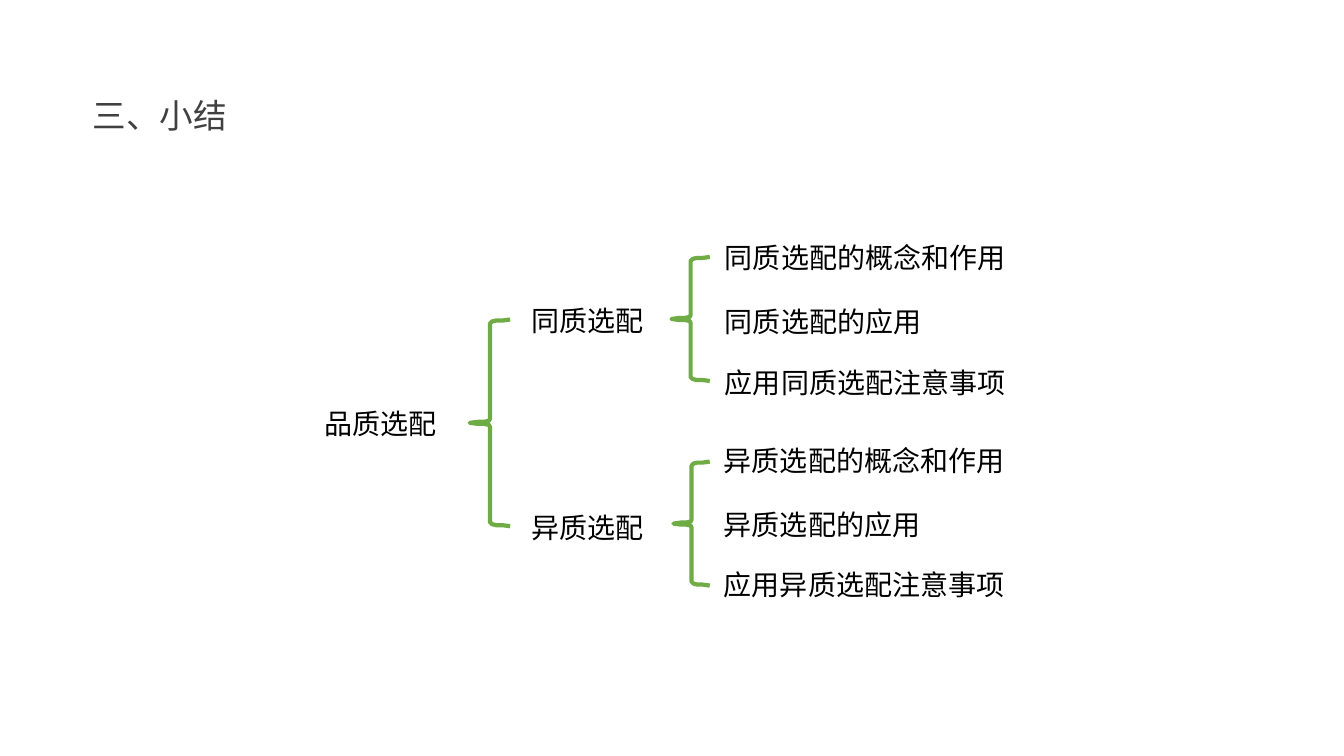
from pptx import Presentation
from pptx.dml.color import RGBColor
from pptx.enum.text import MSO_ANCHOR, MSO_AUTO_SIZE
from pptx.oxml.ns import qn
from pptx.util import Inches, Pt
from lxml.etree import SubElement

FONT = "Noto Sans CJK SC"
GREEN = "6FAC46"
TITLE = "三、小结"
TERMS = [
    ("品质选配", 3.22, 4),
    ("同质选配", 5.27, 2.98),
    ("异质选配", 5.27, 5.03),
]
LISTS = [
    (["同质选配的概念和作用", "同质选配的应用", "应用同质选配注意事项"], 7.19, 2.36),
    (["异质选配的概念和作用", "异质选配的应用", "应用异质选配注意事项"], 7.18, 4.37),
]
BRACES = [
    (4.66, 3.17, 0.4, 2.05),
    (6.66, 2.55, 0.38, 1.23),
    (6.68, 4.58, 0.36, 1.23),
]
GAPS = [0, 21.4, 19.3]
ARM = [(1, 0), (0.6, 0.01), (0.3, 0.01), (0.1, 0.02), (0, 0.04)]
TIP = [(0, 0.04), (-0.05, 0.02), (-0.3, 0.01), (-0.6, 0.01), (-1, 0)]


def color(code):
    return RGBColor.from_string(code)


def write(slide, lines, left, top, width, height, size=20, ink="000000",
          anchor=MSO_ANCHOR.TOP, inset=0.03):
    box = slide.shapes.add_textbox(*map(Inches, (left, top, width, height)))
    frame = box.text_frame
    frame.word_wrap = True
    frame.auto_size = MSO_AUTO_SIZE.NONE
    frame.vertical_anchor = anchor
    frame.margin_left = frame.margin_right = frame.margin_bottom = 0
    frame.margin_top = Inches(inset)
    for i, (line, gap) in enumerate(zip(lines, GAPS)):
        para = frame.paragraphs[0] if i == 0 else frame.add_paragraph()
        para.space_before = Pt(gap)
        para.line_spacing = Pt(size * 1.2)
        run = para.add_run()
        run.text = line
        run.font.size = Pt(size)
        run.font.name = FONT
        run.font.color.rgb = color(ink)
        SubElement(run.font._element, qn("a:ea"), typeface=FONT)


def brace(slide, left, top, width, height):
    half, mid, end = width / 2, top + height / 2, top + height
    spine = left + half
    upper = [(spine + x * half, top + y) for x, y in ARM]
    upper += [(spine + x * half, mid - y) for x, y in TIP]
    lower = [(x, top + end - y) for x, y in reversed(upper[:-1])]
    dots = [(Inches(x), Inches(y)) for x, y in upper + lower]
    pen = slide.shapes.build_freeform(*dots[0])
    pen.add_line_segments(dots[1:], close=False)
    shape = pen.convert_to_shape()
    shape.shadow.inherit = False
    shape.fill.background()
    shape.line.color.rgb = color(GREEN)
    shape.line.width = Pt(3)


def main():
    """Build the summary slide with its tree of terms."""
    deck = Presentation()
    deck.slide_width, deck.slide_height = Inches(13.33), Inches(7.5)
    slide = deck.slides.add_slide(deck.slide_layouts[6])
    write(slide, [TITLE], 0.92, 0.4, 11.5, 1.45, size=24, ink="404040",
          anchor=MSO_ANCHOR.MIDDLE)
    for term, left, top in TERMS:
        write(slide, [term], left, top, 1.14, 0.36)
    for lines, left, top in LISTS:
        write(slide, lines, left, top, 2.82, 1.59)
    for place in BRACES:
        brace(slide, *place)
    deck.save("out.pptx")


if __name__ == "__main__":
    main()
